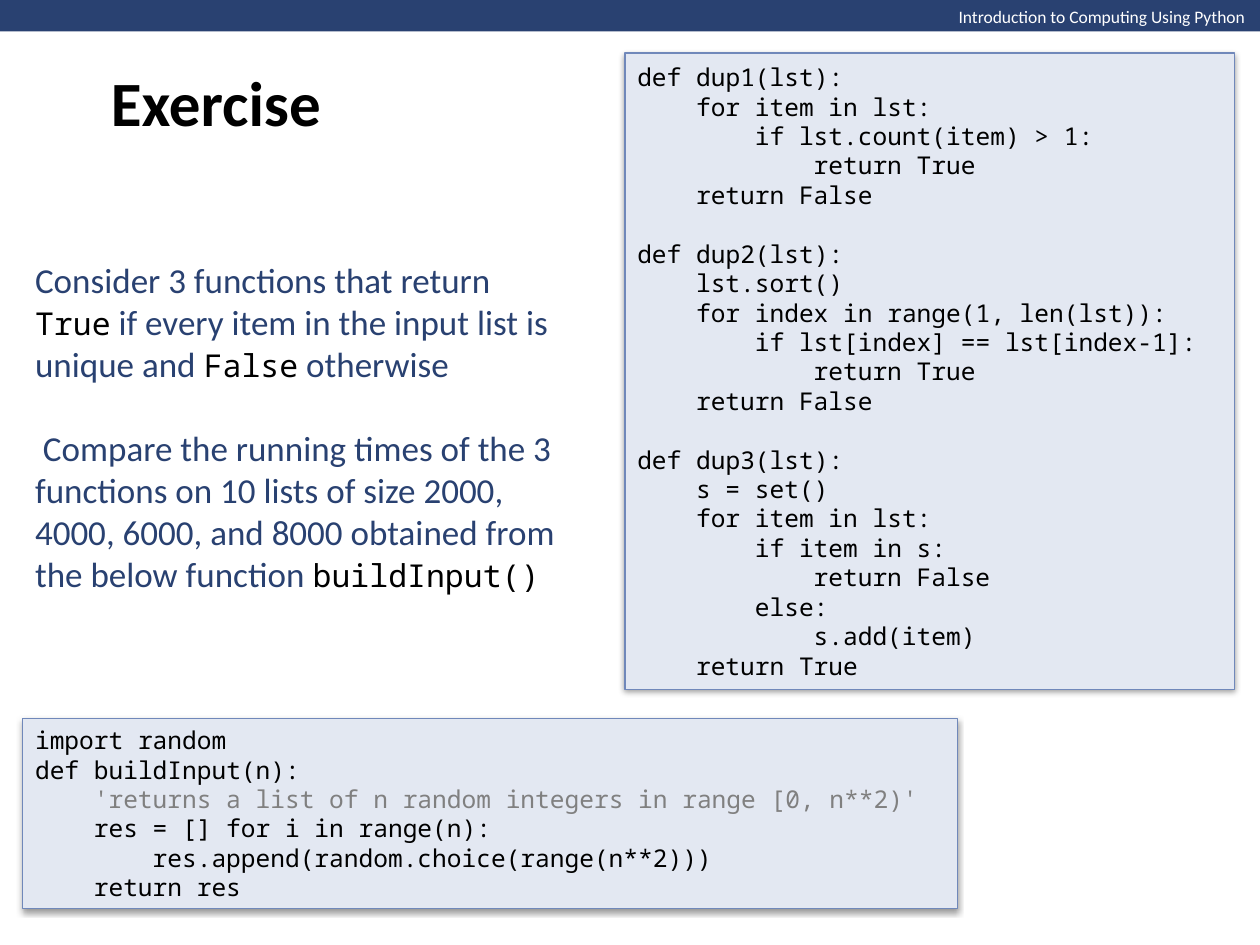
from lxml import etree
from pptx import Presentation
from pptx import util as u
from pptx.dml.color import RGBColor
from pptx.enum import shapes, text
from pptx.oxml import ns

SANS, MONO = "Calibri", "Noto Sans Mono"
NAVY, BLACK, WHITE, GRAY = "294171", "000000", "FFFFFF", "808080"
PALE, EDGE = "E3E8F2", "7088BA"

BODY = {"size": 20, "name": SANS, "color": NAVY}
WORD = {"size": 18, "name": MONO, "color": BLACK}
CODE = {"size": 14, "name": MONO, "color": BLACK}
DOC = {**CODE, "color": GRAY}
HEAD = {"size": 36, "name": SANS, "color": BLACK, "bold": True}
BOOK = {"size": 10, "name": SANS, "color": WHITE}

TITLE = "Exercise"
COURSE = "Introduction to Computing Using Python"
TASK = [
    [("Consider 3 functions that return ", BODY), ("True", WORD),
     (" if every item in the input list is unique and ", BODY),
     ("False", WORD), (" otherwise", BODY)],
    [(" Compare the running times of the 3 functions on 10 lists of size "
      "2000, 4000, 6000, and 8000 obtained from", BODY)],
    [("the below function ", BODY), ("buildInput()", WORD)],
]
DUPS = """def dup1(lst):
    for item in lst:
        if lst.count(item) > 1:
            return True
    return False

def dup2(lst):
    lst.sort()
    for index in range(1, len(lst)):
        if lst[index] == lst[index-1]:
            return True
    return False

def dup3(lst):
    s = set()
    for item in lst:
        if item in s:
            return False
        else:
            s.add(item)
    return True"""
BUILD = """import random
def buildInput(n):
    'returns a list of n random integers in range [0, n**2)'
    res = [] for i in range(n):
        res.append(random.choice(range(n**2)))
    return res"""
PANELS = [((4.96, 0.42, 4.84, 5.05), DUPS), ((0.18, 5.7, 7.42, 1.51), BUILD)]
CHAR = 8.4
LINE = 16.8


def rgb(code):
    return RGBColor.from_string(code)


def place(box):
    return [u.Inches(n) for n in box]


def style(font, form):
    for key, val in form.items():
        if key == "color":
            font.color.rgb = rgb(val)
        else:
            setattr(font, key, u.Pt(val) if key == "size" else val)


def write(frame, paras, wrap=True, anchor=text.MSO_ANCHOR.MIDDLE,
          fit=text.MSO_AUTO_SIZE.SHAPE_TO_FIT_TEXT):
    frame.word_wrap, frame.vertical_anchor, frame.auto_size = wrap, anchor, fit
    for num, runs in enumerate(paras):
        para = frame.add_paragraph() if num else frame.paragraphs[0]
        para.alignment = text.PP_ALIGN.LEFT
        for words, form in runs:
            run = para.add_run()
            run.text = words
            style(run.font, form)


def block(slide, box, fill, line=None):
    rect = slide.shapes.add_shape(shapes.MSO_SHAPE.RECTANGLE, *place(box))
    rect.shadow.inherit = False
    rect.fill.solid()
    rect.fill.fore_color.rgb = rgb(fill)
    if line:
        rect.line.color.rgb = rgb(line)
        rect.line.width = u.Pt(0.75)
    else:
        rect.line.fill.background()
    return rect


def shade(rect):
    glow = rect._element.spPr.find(ns.qn("a:effectLst"))
    cast = etree.SubElement(glow, ns.qn("a:outerShdw"), blurRad=str(u.Pt(3.1)),
                            dist=str(u.Pt(1.6)), dir="5400000", rotWithShape="0")
    tint = etree.SubElement(cast, ns.qn("a:srgbClr"), val=BLACK)
    etree.SubElement(tint, ns.qn("a:alpha"), val="38000")


def panel(slide, box, code):
    rect = block(slide, box, PALE, EDGE)
    shade(rect)
    rows = code.split("\n")
    lines = [row for row in rows if row]
    bare = [row.strip() for row in lines]
    write(rect.text_frame, [[(row, DOC if row[0] == "'" else CODE)] for row in bare])
    gaps = {rows[num + 1] for num, row in enumerate(rows) if not row}
    for para, row, core in zip(rect.text_frame.paragraphs, lines, bare):
        left = u.Pt(CHAR * (len(row) - len(core)))
        para._p.get_or_add_pPr().set("marL", str(left))
        if row in gaps:
            para.space_before = u.Pt(LINE)


def main():
    deck = Presentation()
    deck.slide_width, deck.slide_height = u.Inches(10), u.Inches(7.5)
    slide = deck.slides.add_slide(deck.slide_layouts[5])

    block(slide, (0, 0, 10.01, 0.25), NAVY)
    book = slide.shapes.add_textbox(*place((7.51, 0, 2.5, 0.27)))
    write(book.text_frame, [[(COURSE, BOOK)]], False, text.MSO_ANCHOR.TOP)

    title = slide.shapes.title
    title.left, title.top, title.width, title.height = place((0.78, 0, 9.02, 1.61))
    write(title.text_frame, [[(TITLE, HEAD)]], fit=text.MSO_AUTO_SIZE.NONE)

    task = slide.shapes.add_textbox(*place((0.18, 1.99, 4.42, 2.79)))
    write(task.text_frame, TASK)
    task.text_frame.paragraphs[0].space_after = u.Pt(24)

    for box, code in PANELS:
        panel(slide, box, code)
    deck.save("out.pptx")


if __name__ == "__main__":
    main()
